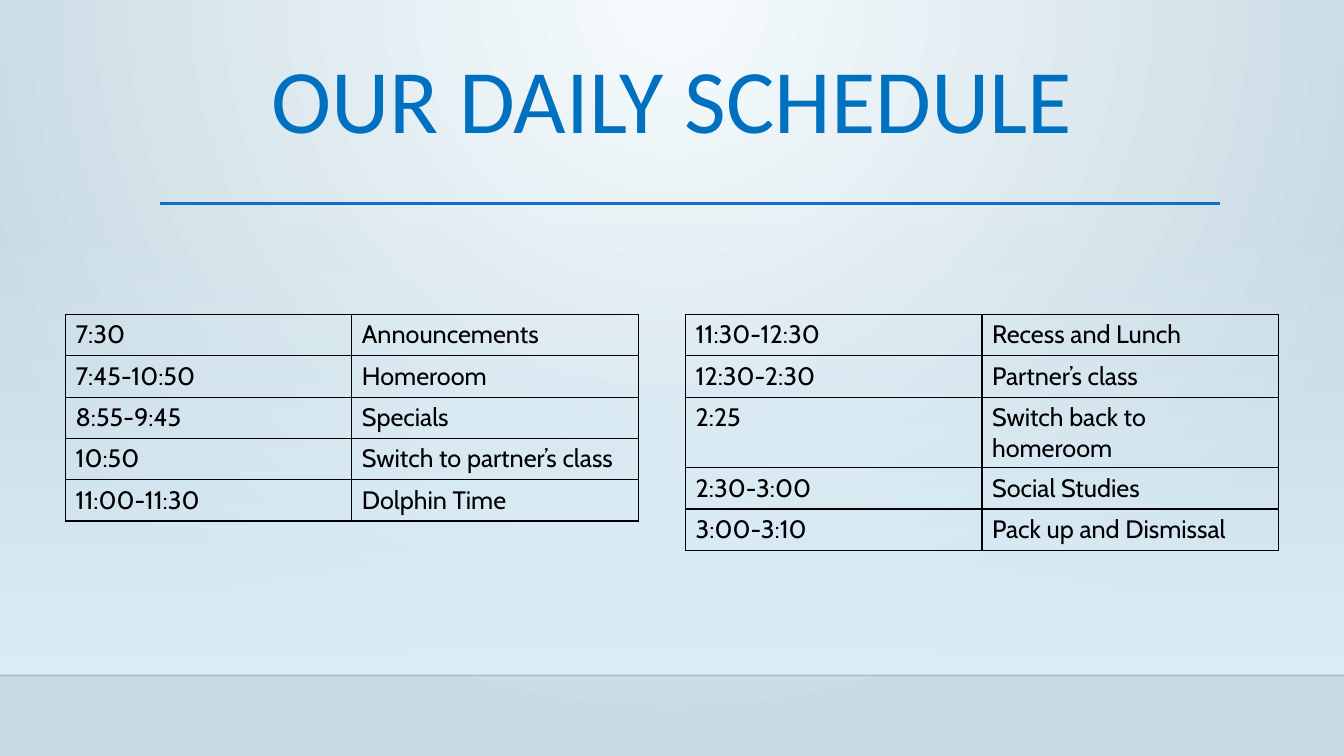
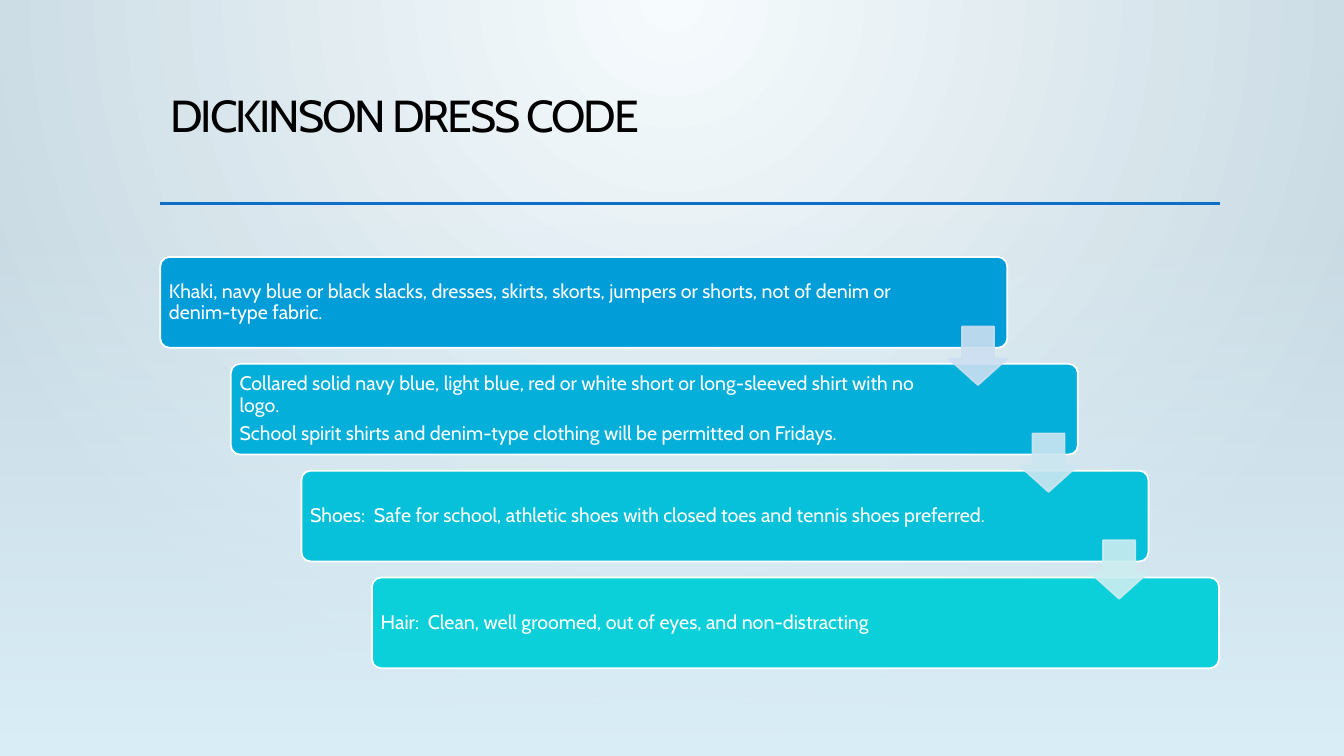
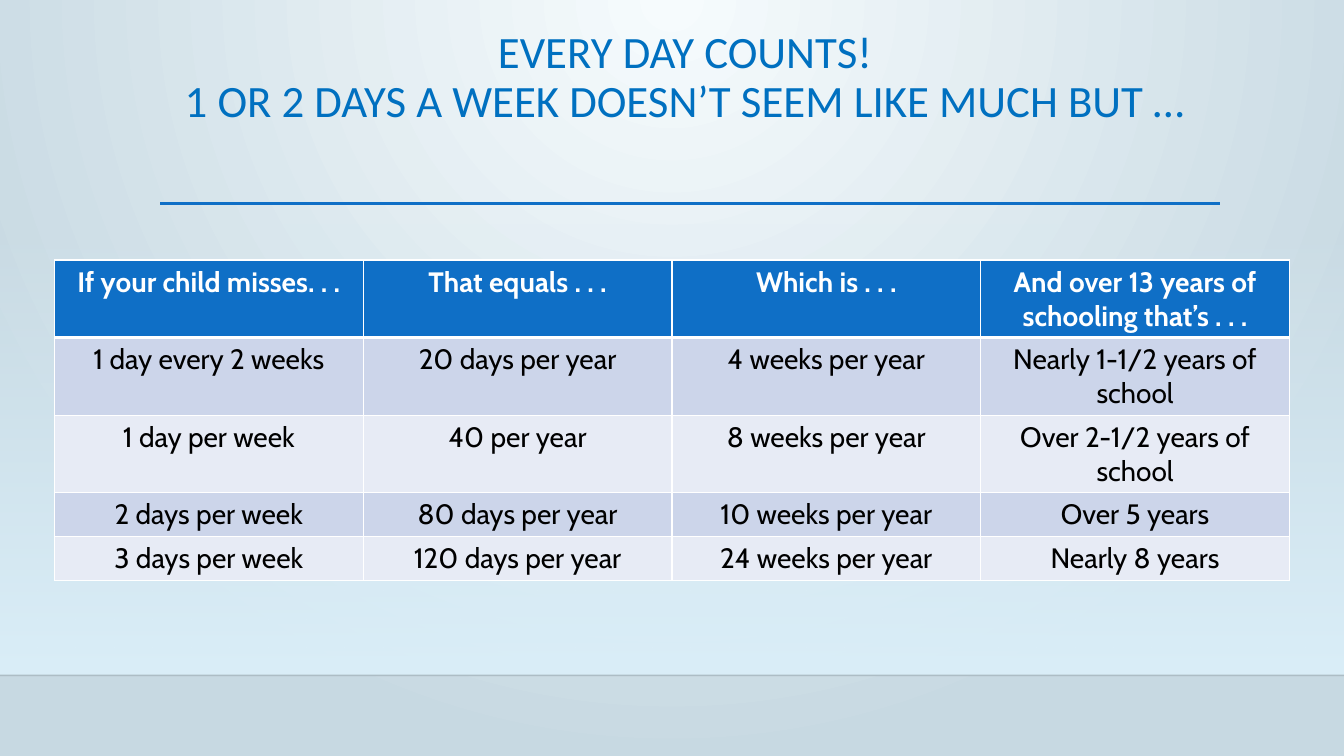
from pptx import Presentation
from pptx.dml.color import RGBColor
from pptx.enum.shapes import MSO_CONNECTOR as Connector, MSO_SHAPE as Preset
from pptx.enum.text import MSO_ANCHOR as Anchor, PP_ALIGN as Align
from pptx.oxml.ns import qn
from pptx.util import Inches, Pt
from lxml.etree import SubElement

# Shared look
WIDTH, HEIGHT = 13.33, 7.5
BODY_FONT, TITLE_FONT = "Cabin", "Calibri"
BLACK, WHITE = "000000", "FFFFFF"
ACCENT, TITLE_BLUE, BAND = "0F6FC6", "0070C0", "DBEFF9"
BACKDROP = ("F6FBFD", "C7D9E2")
BAND_TOP, FLOOR_TOP = 2.21, 6.7
RULE_LEFT, RULE_RIGHT, RULE_TOP = 1.59, 12.1, 2.02

# Content
MORNING = [
    ("7:30", "Announcements"),
    ("7:45-10:50", "Homeroom"),
    ("8:55-9:45", "Specials"),
    ("10:50", "Switch to partner’s class"),
    ("11:00-11:30", "Dolphin Time"),
]
AFTERNOON = [
    ("11:30-12:30", "Recess and Lunch"),
    ("12:30-2:30", "Partner’s class"),
    ("2:25", "Switch back to homeroom"),
    ("2:30-3:00", "Social Studies"),
    ("3:00-3:10", "Pack up and Dismissal"),
]
# Card fill, right inset, paragraphs
DRESS_RULES = [
    ("009DD9", 1.05, ["Khaki, navy blue or black slacks, dresses, skirts, skorts, jumpers "
                      "or shorts, not of denim or denim-type fabric."]),
    ("04AFD9", 1.34, ["Collared solid navy blue, light blue, red or white short or "
                      "long-sleeved shirt with no logo.",
                      "School spirit shirts and denim-type clothing will be permitted "
                      "on Fridays."]),
    ("07C0D9", 1.34, ["Shoes:  Safe for school, athletic shoes with closed toes and "
                      "tennis shoes preferred."]),
    ("0BD0D9", 1.34, ["Hair:  Clean, well groomed, out of eyes, and non-distracting"]),
]
ARROW_FILLS = ["CCDFF1", "CCE6F1", "CCEDF1"]
ABSENCES = [
    ("If your child misses. . .", "That equals . . .", "Which is . . .",
     "And over 13 years of schooling that’s . . ."),
    ("1 day every 2 weeks", "20 days per year", "4 weeks per year",
     "Nearly 1-1/2 years of school"),
    ("1 day per week", "40 per year", "8 weeks per year", "Over 2-1/2 years of school"),
    ("2 days per week", "80 days per year", "10 weeks per year", "Over 5 years"),
    ("3 days per week", "120 days per year", "24 weeks per year", "Nearly 8 years"),
]


def rgb(value):
    return RGBColor.from_string(value)


def box(*lengths):
    return [Inches(length) for length in lengths]


# Fills and lines
def set_opacity(shape, percent):
    for color in shape._element.spPr.iter(qn("a:srgbClr")):
        SubElement(color, qn("a:alpha"), val=str(percent * 1000))


def fill_gradient(fill, owner, stops, circle=False):
    """Fill with (position, colour, opacity) stops, downwards or as a circle."""
    fill.gradient()
    gradient = next(owner.iter(qn("a:gradFill")))
    for child in list(gradient):
        gradient.remove(child)
    stop_list = SubElement(gradient, qn("a:gsLst"))
    for position, color, opacity in stops:
        stop = SubElement(stop_list, qn("a:gs"), pos=str(position * 1000))
        color_element = SubElement(stop, qn("a:srgbClr"), val=color)
        if opacity < 100:
            SubElement(color_element, qn("a:alpha"), val=str(opacity * 1000))
    if circle:
        circle_element = SubElement(gradient, qn("a:path"), path="circle")
        SubElement(circle_element, qn("a:fillToRect"), l="43000", t="0", r="43000", b="100000")
    else:
        SubElement(gradient, qn("a:lin"), ang="5400000", scaled="0")


def add_rule(slide, left, right, top, color, width):
    line = slide.shapes.add_connector(Connector.STRAIGHT, *box(left, top, right, top))
    line.line.color.rgb = rgb(color)
    line.line.width = Pt(width)
    SubElement(line._element.spPr, qn("a:effectLst"))
    return line


def add_preset(slide, preset, position, adjustments=()):
    shape = slide.shapes.add_shape(preset, *box(*position))
    shape.shadow.inherit = False
    for index, value in enumerate(adjustments):
        shape.adjustments[index] = value
    return shape


def paint(shape, fill, line):
    shape.fill.solid()
    shape.fill.fore_color.rgb = rgb(fill)
    shape.line.color.rgb = rgb(line)
    shape.line.width = Pt(1.25)


# Text
def add_run(paragraph, text, size, color, font=BODY_FONT, bold=False):
    run = paragraph.add_run()
    run.text = text
    run.font.name = font
    run.font.size = Pt(size)
    run.font.bold = bold
    run.font.color.rgb = rgb(color)
    return run


def add_title(slide, position, lines, size, color=TITLE_BLUE, font=TITLE_FONT,
              align=Align.CENTER, spacing=0):
    frame = slide.shapes.add_textbox(*box(*position)).text_frame
    frame.word_wrap = True
    paragraph = frame.paragraphs[0]
    paragraph.alignment = align
    paragraph.line_spacing = 0.9
    for index, text in enumerate(lines):
        if index:
            paragraph.add_line_break()
        run = add_run(paragraph, text, size, color, font)
        if spacing:
            run._r.get_or_add_rPr().set("spc", str(int(spacing * 100)))


# Tables
def set_borders(cell, color, widths):
    """Draw the left, right, top and bottom borders, ahead of the cell fill."""
    properties = cell._tc.get_or_add_tcPr()
    for index, (side, width) in enumerate(zip("LRTB", widths)):
        border = SubElement(properties, qn(f"a:ln{side}"), w=str(Pt(width)))
        SubElement(SubElement(border, qn("a:solidFill")), qn("a:srgbClr"), val=color)
        properties.insert(index, border)


def add_table(slide, left, top, width, heights, rows, size, border, header=False):
    columns = len(rows[0])
    frame = slide.shapes.add_table(len(rows), columns, *box(left, top, width, sum(heights)))
    table = frame.table
    table.first_row = header
    table.horz_banding = False
    for column in table.columns:
        column.width = Inches(width / columns)
    for row_index, (values, height) in enumerate(zip(rows, heights)):
        table.rows[row_index].height = Inches(height)
        is_header = header and row_index == 0
        for column_index, value in enumerate(values):
            cell = table.cell(row_index, column_index)
            if header:
                cell.fill.solid()
                stripe = "CCD5EA" if row_index % 2 else "E7EBF5"
                cell.fill.fore_color.rgb = rgb(ACCENT if is_header else stripe)
            else:
                cell.fill.background()
            above = 3 if header and row_index == 1 else 1
            set_borders(cell, border, (1, 1, above, 3 if is_header else 1))
            paragraph = cell.text_frame.paragraphs[0]
            paragraph.alignment = Align.CENTER if header else Align.LEFT
            add_run(paragraph, value, size, WHITE if is_header else BLACK, bold=is_header)


# Dress code steps
def add_card(slide, left, top, fill, right_inset, texts):
    card = add_preset(slide, Preset.ROUNDED_RECTANGLE, (left, top, 8.4, 0.9), [0.1])
    paint(card, fill, WHITE)
    frame = card.text_frame
    frame.word_wrap = True
    frame.vertical_anchor = Anchor.MIDDLE
    frame.margin_left = frame.margin_top = frame.margin_bottom = Inches(0.06)
    frame.margin_right = Inches(right_inset)
    for index, text in enumerate(texts):
        paragraph = frame.add_paragraph() if index else frame.paragraphs[0]
        paragraph.alignment = Align.LEFT
        paragraph.line_spacing = 0.9
        paragraph.space_after = Pt(5)
        add_run(paragraph, text, 14, WHITE)


def add_step_arrow(slide, left, top, fill):
    arrow = add_preset(slide, Preset.DOWN_ARROW, (left, top, 0.58, 0.58), [0.55, 0.45])
    paint(arrow, fill, fill)
    set_opacity(arrow, 90)


# Slides
def add_slide(presentation, floor=True):
    """Add a slide with its backdrop, pale band and rule, and a floor strip if wanted."""
    slide = presentation.slides.add_slide(presentation.slide_layouts[6])
    inner, outer = BACKDROP
    fill_gradient(slide.background.fill, slide._element,
                  [(0, inner, 100), (100, outer, 100)], circle=True)
    bottom = FLOOR_TOP if floor else HEIGHT
    band = add_preset(slide, Preset.RECTANGLE, (0, BAND_TOP, WIDTH, bottom - BAND_TOP))
    fill_gradient(band.fill, band._element, [(0, BAND, 0), (100, BAND, 100)])
    band.line.fill.background()
    if floor:
        set_opacity(add_rule(slide, 0, WIDTH, FLOOR_TOP, BLACK, 1), 20)
    add_rule(slide, RULE_LEFT, RULE_RIGHT, RULE_TOP, ACCENT, 2.5)
    return slide


def build_schedule(presentation):
    slide = add_slide(presentation)
    add_title(slide, (0.98, 0.5, 11.37, 1.26), ["OUR DAILY SCHEDULE"], 64.8)
    for left, width, rows in [(0.65, 5.68, MORNING), (6.8, 5.88, AFTERNOON)]:
        add_table(slide, left, 3.12, width, [0.41] * len(rows), rows, 18, BLACK)


def build_dress_code(presentation):
    slide = add_slide(presentation, floor=False)
    add_title(slide, (RULE_LEFT, 0.88, 10.5, 1.15), ["DICKINSON DRESS CODE"], 32,
              BLACK, BODY_FONT, Align.LEFT, spacing=-1.5)
    corners = [(RULE_LEFT + 0.7 * step, 2.55 + 1.06 * step) for step in range(len(DRESS_RULES))]
    for (left, top), rule in zip(corners, DRESS_RULES):
        add_card(slide, left, top, *rule)
    for (left, top), fill in zip(corners, ARROW_FILLS):
        add_step_arrow(slide, left + 7.82, top + 0.69, fill)


def build_attendance(presentation):
    slide = add_slide(presentation)
    add_title(slide, (0.67, 0.25, 12.25, 1.78),
              ["EVERY DAY COUNTS!", "1 OR 2 DAYS A WEEK DOESN’T SEEM LIKE MUCH BUT …"], 32)
    add_table(slide, 0.54, 2.58, 12.25, [0.77] * 3 + [0.43] * 2, ABSENCES, 20, WHITE,
              header=True)


def main():
    presentation = Presentation()
    presentation.slide_width, presentation.slide_height = box(WIDTH, HEIGHT)
    build_schedule(presentation)
    build_dress_code(presentation)
    build_attendance(presentation)
    presentation.save("out.pptx")


if __name__ == "__main__":
    main()
